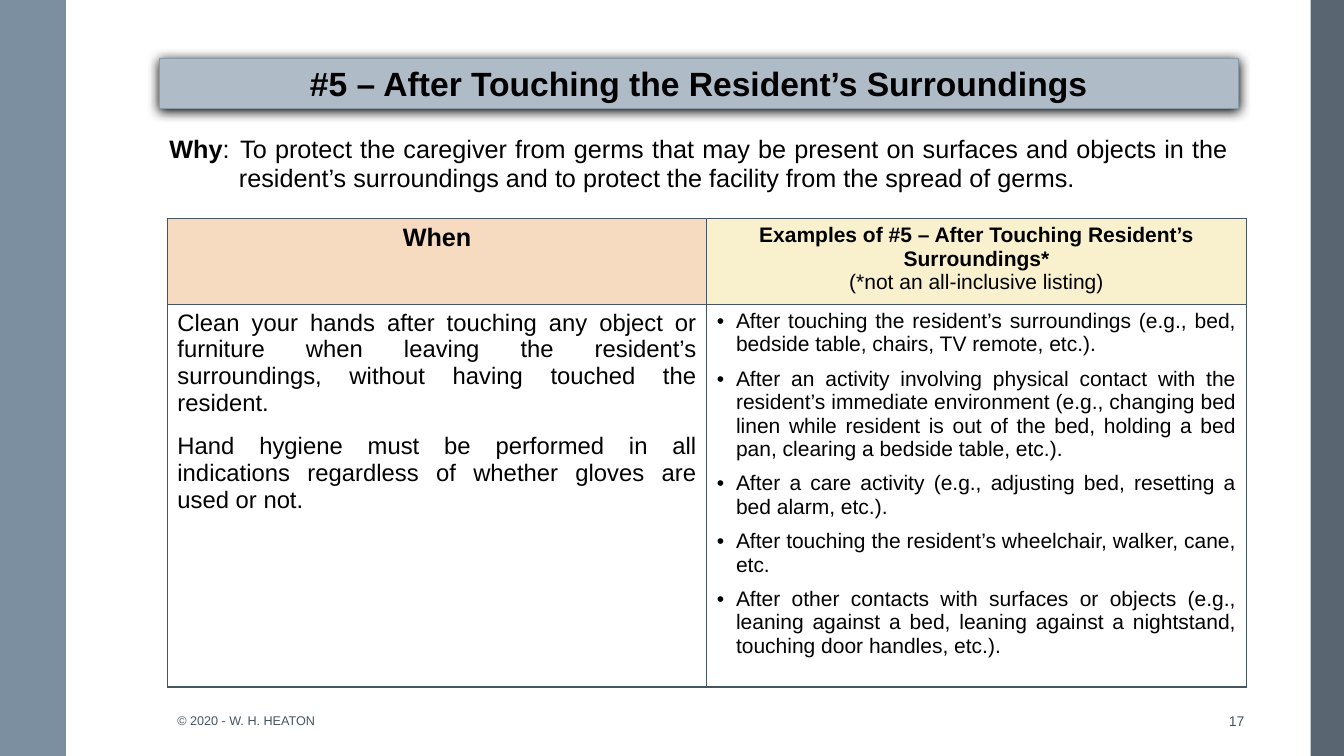
import pptx
import pptx.util
import pptx.dml.color
import pptx.enum.shapes
import pptx.enum.text
from lxml import etree
from pptx.oxml.ns import qn

Inches, Pt = pptx.util.Inches, pptx.util.Pt
RGBColor = pptx.dml.color.RGBColor
ALIGN = pptx.enum.text.PP_ALIGN
ANCHOR = pptx.enum.text.MSO_ANCHOR
RECTANGLE = pptx.enum.shapes.MSO_SHAPE.RECTANGLE

# Content
TITLE = "#5 – After Touching the Resident’s Surroundings"
WHY_LABEL = "Why"
WHY = (": \tTo protect the caregiver from germs that may be present on surfaces and objects "
       "in the resident’s surroundings and to protect the facility from the spread of germs. ")
WHEN_HEADING = "When"
EXAMPLES_HEADING = "Examples of #5 – After Touching Resident’s Surroundings*"
EXAMPLES_NOTE = "(*not an all-inclusive listing)"
WHEN = [
    "Clean your hands after touching any object or furniture when leaving the resident’s "
    "surroundings, without having touched the resident.",
    "Hand hygiene must be performed in all indications regardless of whether gloves are "
    "used or not.",
]
EXAMPLES = [
    "After touching the resident’s surroundings (e.g., bed, bedside table, chairs, TV remote, etc.).",
    "After an activity involving physical contact with the resident’s immediate environment "
    "(e.g., changing bed linen while resident is out of the bed, holding a bed pan, clearing "
    "a bedside table, etc.).",
    "After a care activity (e.g., adjusting bed, resetting a bed alarm, etc.).",
    "After touching the resident’s wheelchair, walker, cane, etc.",
    "After other contacts with surfaces or objects (e.g., leaning against a bed, leaning "
    "against a nightstand, touching door handles, etc.).",
]
COPYRIGHT = "© 2020 - W. H. HEATON"
PAGE = "17"

# Colours and formats
BLACK = RGBColor(0x00, 0x00, 0x00)
WHITE = RGBColor(0xFF, 0xFF, 0xFF)
SLATE = RGBColor(0x46, 0x55, 0x62)
RIGHT_BAR = RGBColor(0x47, 0x55, 0x62)
LEFT_BAR = RGBColor(0x6A, 0x80, 0x93)
BANNER = RGBColor(0xAF, 0xBB, 0xC6)
BANNER_EDGE = RGBColor(0x87, 0x9A, 0xAA)
PEACH = RGBColor(0xF6, 0xDB, 0xC1)
CREAM = RGBColor(0xF9, 0xF1, 0xCE)

CENTRED = {"alignment": ALIGN.CENTER}
JUSTIFIED = {"alignment": ALIGN.JUSTIFY}
WHEN_SPACING = {**JUSTIFIED, "space_before": Pt(6), "space_after": Pt(6)}
EXAMPLE_SPACING = {**JUSTIFIED, "space_before": Pt(4), "space_after": Pt(4)}

# Layout in inches
SLIDE_W, SLIDE_H = 13.33, 7.5
CONTENT_W = 10.7
BANNER_X, GUIDE_X = 1.58, 1.66
FOOTER_Y, FOOTER_H = 6.95, 0.4


def set_all(target, values):
    for name, value in values.items():
        setattr(target, name, value)


def add_xml(parent, tag, **attributes):
    return etree.SubElement(parent, qn(tag), attributes)


def write(frame, paragraphs):
    """Each paragraph is (format, runs, hanging indent, bullet); a run is (text, size, bold, colour)."""
    for number, (layout, runs, hanging, bullet) in enumerate(paragraphs):
        paragraph = frame.paragraphs[0] if number == 0 else frame.add_paragraph()
        set_all(paragraph, layout)
        for text, size, bold, colour in runs:
            run = paragraph.add_run()
            run.text = text
            set_all(run.font, {"name": "Arial", "size": Pt(size), "bold": bold})
            run.font.color.rgb = colour
        properties = paragraph._p.get_or_add_pPr()
        if hanging:
            properties.set("marL", str(Inches(hanging)))
            properties.set("indent", str(-Inches(hanging)))
        if bullet:
            add_xml(properties, "a:buFont", typeface="Arial")
            add_xml(properties, "a:buChar", char="•")


def plain(layout, text, size, bold=False, colour=BLACK):
    return layout, [(text, size, bold, colour)], 0, False


def add_block(slide, x, y, w, h, colour, alpha=100):
    block = slide.shapes.add_shape(RECTANGLE, Inches(x), Inches(y), Inches(w), Inches(h))
    block.shadow.inherit = False
    block.fill.solid()
    block.fill.fore_color.rgb = colour
    block.line.fill.background()
    if alpha < 100:
        add_xml(block._element.spPr.find(qn("a:solidFill"))[0], "a:alpha", val=str(alpha * 1000))
    return block


def add_grid(slide, x, y, columns, rows, cells, edge):
    """Cells are rows of (fill, paragraphs)."""
    grid = slide.shapes.add_table(len(rows), len(columns), Inches(x), Inches(y),
                                  Inches(sum(columns)), Inches(sum(rows))).table
    set_all(grid, {"first_row": False, "horz_banding": False})
    for column, width in zip(grid.columns, columns):
        column.width = Inches(width)
    for r, height in enumerate(rows):
        grid.rows[r].height = Inches(height)
        for c, (colour, paragraphs) in enumerate(cells[r]):
            cell = grid.cell(r, c)
            for side in ("a:lnL", "a:lnR", "a:lnT", "a:lnB"):
                border = add_xml(cell._tc.get_or_add_tcPr(), side, w=str(Pt(1)))
                add_xml(add_xml(border, "a:solidFill"), "a:srgbClr", val=str(edge))
            cell.fill.solid()
            cell.fill.fore_color.rgb = colour
            write(cell.text_frame, paragraphs)


def main():
    deck = pptx.Presentation()
    set_all(deck, {"slide_width": Inches(SLIDE_W), "slide_height": Inches(SLIDE_H)})
    slide = deck.slides.add_slide(deck.slide_layouts[6])

    # Side bars
    add_block(slide, 13, 0, 0.33, SLIDE_H, RIGHT_BAR, 90)
    add_block(slide, 0, 0, 0.67, SLIDE_H, LEFT_BAR, 88)
    bar_edge = slide.shapes.add_connector(pptx.enum.shapes.MSO_CONNECTOR.STRAIGHT,
                                          Inches(0.67), 0, Inches(0.67), Inches(SLIDE_H))
    bar_edge.line.color.rgb = WHITE
    bar_edge.line.width = Pt(1.5)
    add_xml(bar_edge._element.spPr, "a:effectLst")

    # Title banner with a soft shadow
    banner = add_block(slide, BANNER_X, 0.58, CONTENT_W, 0.5, BANNER)
    banner.line.color.rgb = BANNER_EDGE
    banner.line.width = Pt(0.75)
    shadow = add_xml(banner._element.spPr.find(qn("a:effectLst")), "a:outerShdw",
                     blurRad=str(Pt(8.5)), dist=str(Pt(1)), dir="5400000",
                     algn="t", rotWithShape="0")
    add_xml(shadow, "a:srgbClr", val=str(BLACK))
    set_all(banner.text_frame, {"word_wrap": True, "vertical_anchor": ANCHOR.BOTTOM})
    write(banner.text_frame, [plain({**CENTRED, "line_spacing": 0.9}, TITLE, 24, True)])

    # Footer
    for x, w, text, size, align in ((GUIDE_X, 4.35, COPYRIGHT, 9, ALIGN.LEFT),
                                    (11.77, 0.67, PAGE, 10, ALIGN.RIGHT)):
        footer = slide.shapes.add_textbox(Inches(x), Inches(FOOTER_Y), Inches(w), Inches(FOOTER_H))
        set_all(footer.text_frame, {"word_wrap": True, "vertical_anchor": ANCHOR.MIDDLE})
        write(footer.text_frame, [plain({"alignment": align}, text, size, False, SLATE)])

    # When and examples
    headings = [
        (PEACH, [plain(CENTRED, WHEN_HEADING, 18, True)]),
        (CREAM, [plain(CENTRED, EXAMPLES_HEADING, 15, True), plain(CENTRED, EXAMPLES_NOTE, 15)]),
    ]
    details = [
        (WHITE, [plain(WHEN_SPACING, text, 17) for text in WHEN]),
        (WHITE, [(EXAMPLE_SPACING, [(text, 15, False, BLACK)], 0.19, True) for text in EXAMPLES]),
    ]
    add_grid(slide, GUIDE_X, 2.17, [CONTENT_W / 2] * 2, [0.79, 3.55], [headings, details], SLATE)

    # Why
    reason = (JUSTIFIED, [(WHY_LABEL, 18, True, BLACK), (WHY, 18, False, BLACK)], 0.69, False)
    add_grid(slide, BANNER_X, 1.3, [CONTENT_W], [0.7], [[(WHITE, [reason])]], WHITE)

    deck.save("out.pptx")


if __name__ == "__main__":
    main()
